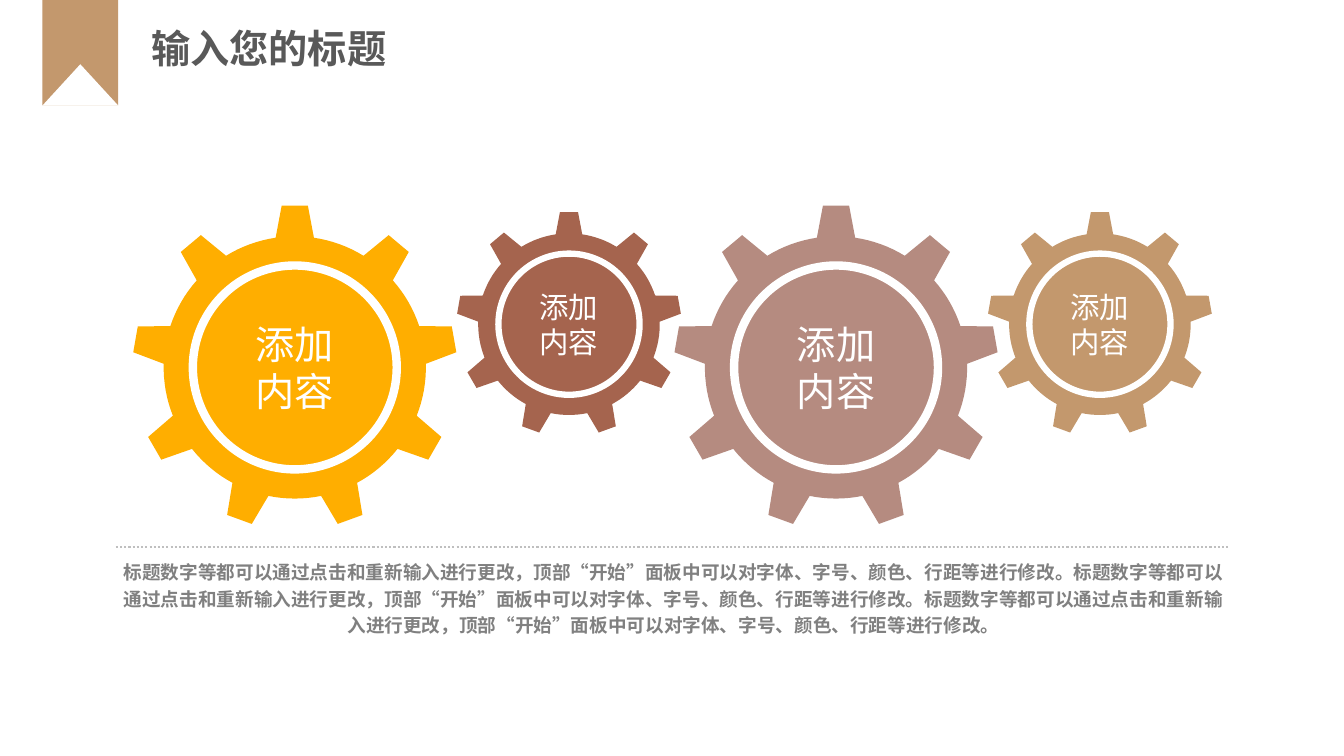
from dataclasses import dataclass
from math import cos, radians, sin

from lxml import etree
from pptx import Presentation
from pptx.dml.color import RGBColor
from pptx.enum.dml import MSO_LINE
from pptx.enum.shapes import MSO_CONNECTOR, MSO_SHAPE
from pptx.enum.text import MSO_ANCHOR, PP_ALIGN
from pptx.oxml.ns import qn
from pptx.util import Cm, Pt

RECTANGLE, TRIANGLE, OVAL = MSO_SHAPE.RECTANGLE, MSO_SHAPE.ISOSCELES_TRIANGLE, MSO_SHAPE.OVAL
STRAIGHT, DOTTED = MSO_CONNECTOR.STRAIGHT, MSO_LINE.ROUND_DOT
LEFT, CENTER, MIDDLE, TOP = PP_ALIGN.LEFT, PP_ALIGN.CENTER, MSO_ANCHOR.MIDDLE, MSO_ANCHOR.TOP

# Content
TITLE = "输入您的标题"
SENTENCE = "标题数字等都可以通过点击和重新输入进行更改，顶部“开始”面板中可以对字体、字号、颜色、行距等进行修改。"
DESCRIPTION = SENTENCE * 3
GEAR_LABEL = ["添加", "内容"]
# Centre x, centre y and diameter in cm, colour, label size and ring width in points
GEARS = [
    (7.43, 9.26, 8.26, "FFAE00", 28, 6),
    (14.34, 8.17, 5.72, "A5644E", 21, 4.5),
    (21.07, 9.26, 8.26, "B58B80", 28, 6),
    (27.72, 8.17, 5.72, "C3986D", 21, 4.5),
]


@dataclass(frozen=True)
class Theme:
    title_font: str = "Noto Sans CJK SC"
    body_font: str = "Roboto Condensed"
    white: str = "FFFFFF"
    ribbon: str = "C3986D"
    title: str = "595959"
    body: str = "808080"
    rule: str = "BFBFBF"
    title_size: float = 28
    body_size: float = 13.3


THEME = Theme()

# Gear geometry: angles in degrees, radii as shares of the outer radius
TOOTH_COUNT = 9
TOOTH_STEP = 360 / TOOTH_COUNT
TIP_ANGLE, TIP_RADIUS = 4.63, 0.99
ROOT_ANGLE, ROOT_RADIUS = 8.4, 0.8
ARC_STEPS = 8
DISC_SHARE = 0.622


def paint(shape, color):
    shape.shadow.inherit = False
    shape.fill.solid()
    shape.fill.fore_color.rgb = RGBColor.from_string(color)
    shape.line.fill.background()


def write(frame, lines, font_name, size, color, align, bold=False):
    frame.text = "\n".join(lines)
    for paragraph in frame.paragraphs:
        paragraph.alignment = align
        font = paragraph.font
        font.name, font.size, font.bold = font_name, Pt(size), bold
        font.color.rgb = RGBColor.from_string(color)
        defaults = paragraph._p.find(".//" + qn("a:defRPr"))
        etree.SubElement(defaults, qn("a:ea"), typeface=THEME.title_font)


def set_margins(frame, margin):
    frame.margin_left = frame.margin_right = margin
    frame.margin_top = frame.margin_bottom = margin


def gear_outline():
    """Angle and radius of each corner, clockwise from the top tooth."""
    gap = TOOTH_STEP - 2 * ROOT_ANGLE
    for tooth in range(TOOTH_COUNT):
        middle = tooth * TOOTH_STEP
        yield middle - TIP_ANGLE, TIP_RADIUS
        yield middle + TIP_ANGLE, TIP_RADIUS
        for step in range(ARC_STEPS + 1):
            yield middle + ROOT_ANGLE + gap * step / ARC_STEPS, ROOT_RADIUS


def add_gear(slide, center_x, center_y, diameter, color, label_size, ring_width):
    group = slide.shapes.add_group_shape()
    points = [
        (
            Cm(center_x + diameter / 2 * radius * sin(radians(angle))),
            Cm(center_y - diameter / 2 * radius * cos(radians(angle))),
        )
        for angle, radius in gear_outline()
    ]
    builder = group.shapes.build_freeform(*points[0])
    builder.add_line_segments(points[1:], close=True)
    paint(builder.convert_to_shape(), color)

    disc_size = diameter * DISC_SHARE
    disc = group.shapes.add_shape(
        OVAL, Cm(center_x - disc_size / 2), Cm(center_y - disc_size / 2), Cm(disc_size), Cm(disc_size)
    )
    paint(disc, color)
    disc.line.color.rgb = RGBColor.from_string(THEME.white)
    disc.line.width = Pt(ring_width)
    disc.text_frame.vertical_anchor = MIDDLE
    write(disc.text_frame, GEAR_LABEL, THEME.body_font, label_size, THEME.white, CENTER)


def main():
    presentation = Presentation()
    presentation.slide_width, presentation.slide_height = Cm(33.87), Cm(19.05)
    slide = presentation.slides.add_slide(presentation.slide_layouts[5])
    shapes = slide.shapes

    # Ribbon with a notch
    paint(shapes.add_shape(RECTANGLE, Cm(1.07), Cm(-0.03), Cm(1.91), Cm(2.69)), THEME.ribbon)
    paint(shapes.add_shape(TRIANGLE, Cm(1.07), Cm(1.62), Cm(1.91), Cm(1.04)), THEME.white)

    # Title
    title = shapes.title
    title.left, title.top, title.width, title.height = Cm(3.56), Cm(0.48), Cm(7.9), Cm(1.45)
    title.text_frame.word_wrap = False
    title.text_frame.vertical_anchor = MIDDLE
    write(title.text_frame, [TITLE], THEME.title_font, THEME.title_size, THEME.title, LEFT, bold=True)

    # Gears
    for gear in GEARS:
        add_gear(slide, *gear)

    # Description
    description = shapes.add_textbox(Cm(2.92), Cm(14.02), Cm(28.12), Cm(2.06))
    frame = description.text_frame
    frame.word_wrap = True
    frame.vertical_anchor = TOP
    set_margins(frame, 0)
    write(frame, [DESCRIPTION], THEME.body_font, THEME.body_size, THEME.body, CENTER, bold=True)
    frame.paragraphs[0].line_spacing = 1.2

    # Dotted rule
    rule = shapes.add_connector(STRAIGHT, Cm(2.92), Cm(13.79), Cm(30.99), Cm(13.79))
    rule.line.color.rgb = RGBColor.from_string(THEME.rule)
    rule.line.width = Pt(1.5)
    rule.line.dash_style = DOTTED
    etree.SubElement(rule._element.spPr, qn("a:effectLst"))

    presentation.save("out.pptx")


if __name__ == "__main__":
    main()
